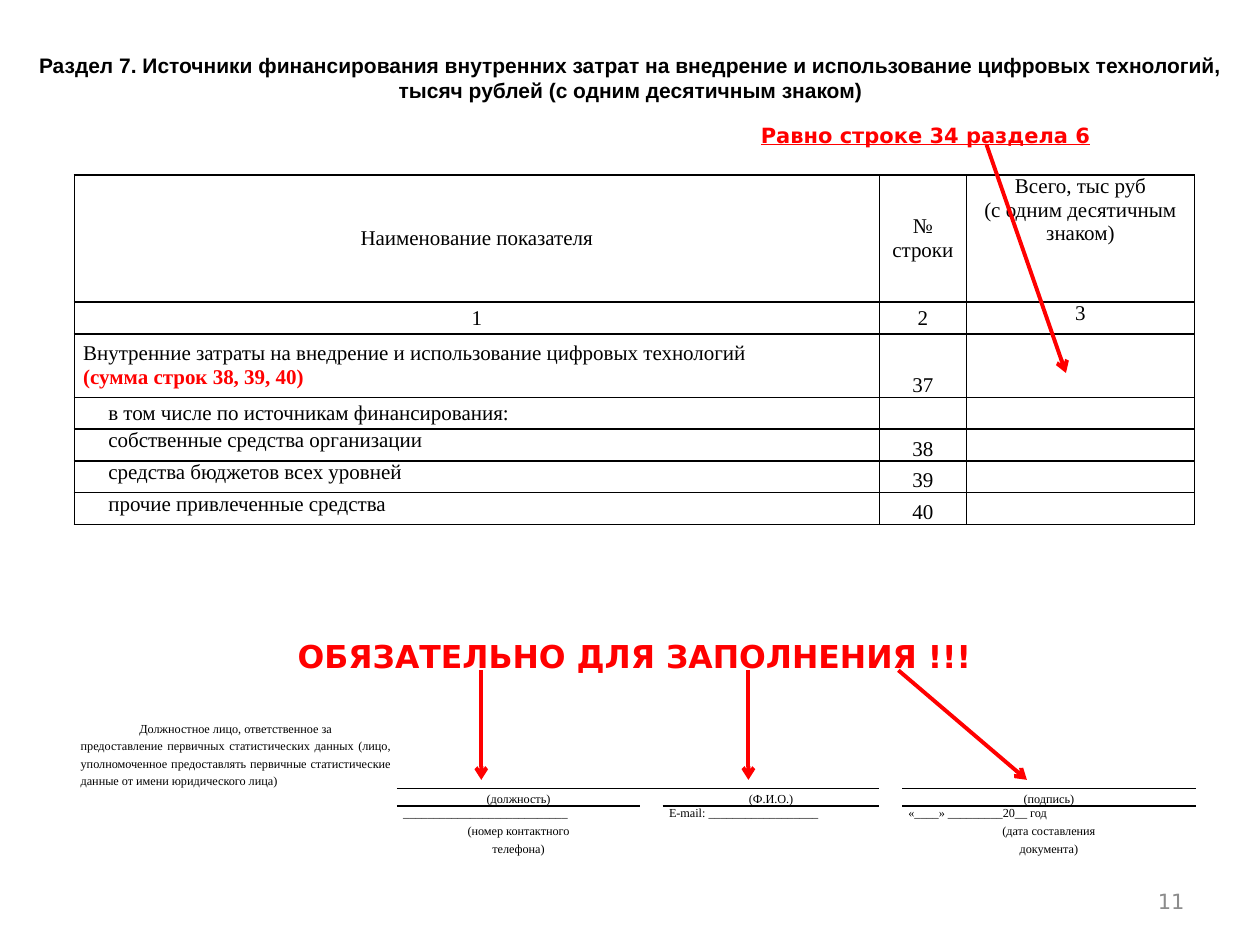
from dataclasses import dataclass
from typing import Optional, Sequence

from lxml import etree
from pptx import Presentation, util as u
from pptx.dml import color
from pptx.enum import shapes, text
from pptx.oxml.ns import qn

WIDE, HIGH = u.Inches(10), u.Inches(7.5)
RED, BLACK, GREY = "FF0000", "000000", "8C8C8C"
SERIF, SANS, HEAD = "Times New Roman", "DejaVu Sans", "Arial"
LEFT, MID, RIGHT, FULL = (text.PP_ALIGN.LEFT, text.PP_ALIGN.CENTER,
                          text.PP_ALIGN.RIGHT, text.PP_ALIGN.JUSTIFY)
TOP, CORE, BASE = (text.MSO_ANCHOR.TOP, text.MSO_ANCHOR.MIDDLE,
                   text.MSO_ANCHOR.BOTTOM)
NO_GRID = "{2D5ABB26-0587-4C30-8999-92F81FD0307C}"


@dataclass
class Font:
    size: float
    face: str = SERIF
    hue: str = BLACK
    bold: bool = False
    under: bool = False


@dataclass
class Line:
    words: str
    align: text.PP_ALIGN = MID
    font: Optional[Font] = None
    lead: Optional[float] = None
    indent: float = 0


@dataclass
class Cell:
    lines: Sequence[Line] = ()
    anchor: text.MSO_ANCHOR = TOP
    edges: str = ""
    top: float = 0


@dataclass
class Label:
    box: tuple
    lines: Sequence[str]
    font: Font
    align: text.PP_ALIGN = MID
    anchor: text.MSO_ANCHOR = TOP
    wrap: bool = True


def px(share: float) -> int:
    """Percent of the slide width."""
    return round(WIDE * share / 100)


def py(share: float) -> int:
    """Percent of the slide height."""
    return round(HIGH * share / 100)


def rgb(code: str) -> color.RGBColor:
    return color.RGBColor.from_string(code)


def write(frame, lines: Sequence[Line], font: Font) -> None:
    frame.text = "\n".join(line.words for line in lines)
    for para, line in zip(frame.paragraphs, lines):
        para.alignment = line.align
        if line.lead:
            para.line_spacing = u.Pt(line.lead)
        if line.indent:
            para._p.get_or_add_pPr().set("marL", str(px(line.indent)))
        look = line.font or font
        for run in para.runs:
            run.font.size, run.font.name = u.Pt(look.size), look.face
            run.font.bold, run.font.underline = look.bold, look.under
            run.font.color.rgb = rgb(look.hue)


def draw_label(slide, label: Label) -> None:
    x, y, w, h = label.box
    frame = slide.shapes.add_textbox(px(x), py(y), px(w), py(h)).text_frame
    frame.word_wrap, frame.vertical_anchor = label.wrap, label.anchor
    write(frame, [Line(t, label.align) for t in label.lines], label.font)


def draw_arrow(slide, x1: float, y1: float, x2: float, y2: float) -> None:
    line = slide.shapes.add_connector(shapes.MSO_CONNECTOR.STRAIGHT,
                                      px(x1), py(y1), px(x2), py(y2))
    line.line.color.rgb, line.line.width = rgb(RED), u.Pt(2.25)
    etree.SubElement(line.line._get_or_add_ln(), qn("a:tailEnd"), type="arrow")
    etree.SubElement(line._element.spPr, qn("a:effectLst"))


def add_edges(cell, edges: str) -> None:
    """Black 1 pt borders on the sides named by the letters L, R, T, B."""
    props = cell._tc.get_or_add_tcPr()
    for side in "LRTB":
        if side in edges:
            edge = etree.SubElement(props, qn("a:ln" + side), w=str(u.Pt(1)))
            fill = etree.SubElement(edge, qn("a:solidFill"))
            etree.SubElement(fill, qn("a:srgbClr"), val=BLACK)


def draw_table(slide, x: float, y: float, cols: Sequence[float],
               rows: Sequence[float], cells: Sequence[Sequence[Cell]],
               font: Font, pad: float):
    table = slide.shapes.add_table(len(rows), len(cols), px(x), py(y),
                                   px(sum(cols)), py(sum(rows))).table
    table._tbl.tblPr.find(qn("a:tableStyleId")).text = NO_GRID
    table.first_row = table.horz_banding = False
    for col, w in zip(table.columns, cols):
        col.width = px(w)
    for row, h in zip(table.rows, rows):
        row.height = py(h)
    for r, line in enumerate(cells):
        for c, plan in enumerate(line):
            cell = table.cell(r, c)
            cell.margin_left = cell.margin_right = px(pad)
            cell.margin_top, cell.margin_bottom = py(plan.top), 0
            cell.vertical_anchor = plan.anchor
            add_edges(cell, plan.edges)
            cell.fill.background()
            if plan.lines:
                write(cell.text_frame, plan.lines, font)
            else:
                etree.SubElement(cell.text_frame.paragraphs[0]._p,
                                 qn("a:endParaRPr"), sz=str(font.size * 100))
    return table


def cost_row(lines: Sequence[Line], code: str, edges: str = "LRTB",
             anchor: text.MSO_ANCHOR = TOP) -> list:
    number = [Line(code)] if code else []
    return [Cell(lines, anchor, edges), Cell(number, BASE, edges),
            Cell(edges=edges)]


def source(words: str) -> list:
    return [Line(words, LEFT, indent=2)]


def head_row(*names: Sequence[str]) -> list:
    return [Cell([Line(t) for t in name], anchor, "LRTB")
            for name, anchor in zip(names, (CORE, CORE, TOP))]


def sign_row(*fields: Sequence[str], align=MID, lead=None, edges="") -> list:
    """Three fields, each after a gap column."""
    row = []
    for field in fields:
        row += [Cell(), Cell([Line(t, align, lead=lead) for t in field],
                             edges=edges)]
    return row


COSTS = [
    head_row(["Наименование показателя"], ["№ строки"],
             ["Всего, тыс руб", "(с одним десятичным знаком)"]),
    head_row(["1"], ["2"], ["3"]),
    cost_row([Line("Внутренние затраты на внедрение и использование цифровых технологий", LEFT),
              Line("(сумма строк 38, 39, 40)", LEFT, Font(12, hue=RED, bold=True))],
             "37", anchor=CORE),
    cost_row(source("в том числе по источникам финансирования:"), "", "LRT", CORE),
    cost_row(source("собственные средства организации"), "38", "LRB"),
    cost_row(source("средства бюджетов всех уровней"), "39"),
    cost_row(source("прочие привлеченные средства"), "40"),
]
OFFICER = Cell([
    Line("Должностное лицо, ответственное за", lead=10),
    Line("предоставление первичных статистических данных (лицо, уполномоченное "
         "предоставлять первичные статистические данные от имени юридического лица)",
         FULL, lead=10)], top=2.96)
SIGNS = [
    [OFFICER] + [Cell()] * 5,
    sign_row(["(должность)"], ["(Ф.И.О.)"], ["(подпись)"], lead=10, edges="T"),
    sign_row(["_" * 27], ["E-mail: " + "_" * 18], ["«____» _________20__ год"],
             align=LEFT),
    sign_row(["(номер контактного", "телефона)"], [],
             ["(дата составления", "документа)"], lead=10),
]
LABELS = [
    Label((71.7, 92.67, 23.3, 5.33), ["11"], Font(12, SANS, GREY), RIGHT, CORE),
    Label((1.6, 4.93, 96.9, 10.8),
          ["Раздел 7. Источники финансирования внутренних затрат на внедрение "
           "и использование цифровых технологий,",
           "тысяч рублей (с одним десятичным знаком)"],
          Font(12, HEAD, bold=True), wrap=False),
    Label((59.4, 12.27, 33.9, 4), ["Равно строке 34 раздела 6"],
          Font(12, SANS, RED, True, True), LEFT),
    Label((16.9, 66.8, 66.9, 5.33), ["ОБЯЗАТЕЛЬНО ДЛЯ ЗАПОЛНЕНИЯ !!!"],
          Font(18, SANS, RED, True)),
]
ARROWS = [(78.3, 15.33, 84.6, 39.47)] + [
    (a, 70.93, b, 82.53) for a, b in ((38.2, 38.2), (59.4, 59.4), (71.3, 81.5))]


def main() -> None:
    deck = Presentation()
    deck.slide_width, deck.slide_height = WIDE, HIGH
    slide = deck.slides.add_slide(deck.slide_layouts[6])
    draw_table(slide, 5.9, 18.53, (63.9, 6.9, 18.1),
               [3.36 * n for n in (4, 1, 2, 1, 1, 1, 1)], COSTS, Font(12), 0.7)
    form = draw_table(slide, 5.9, 73.07, (25.6, 19.3, 1.8, 17.2, 1.8, 23.3),
                      (10.37, 1.85, 1.5, 3.75), SIGNS, Font(7), 0.5)
    for first, last in ((1, 3), (4, 5)):
        form.cell(0, first).merge(form.cell(0, last))
    for label in LABELS:
        draw_label(slide, label)
    for arrow in ARROWS:
        draw_arrow(slide, *arrow)
    deck.save("out.pptx")


if __name__ == "__main__":
    main()
